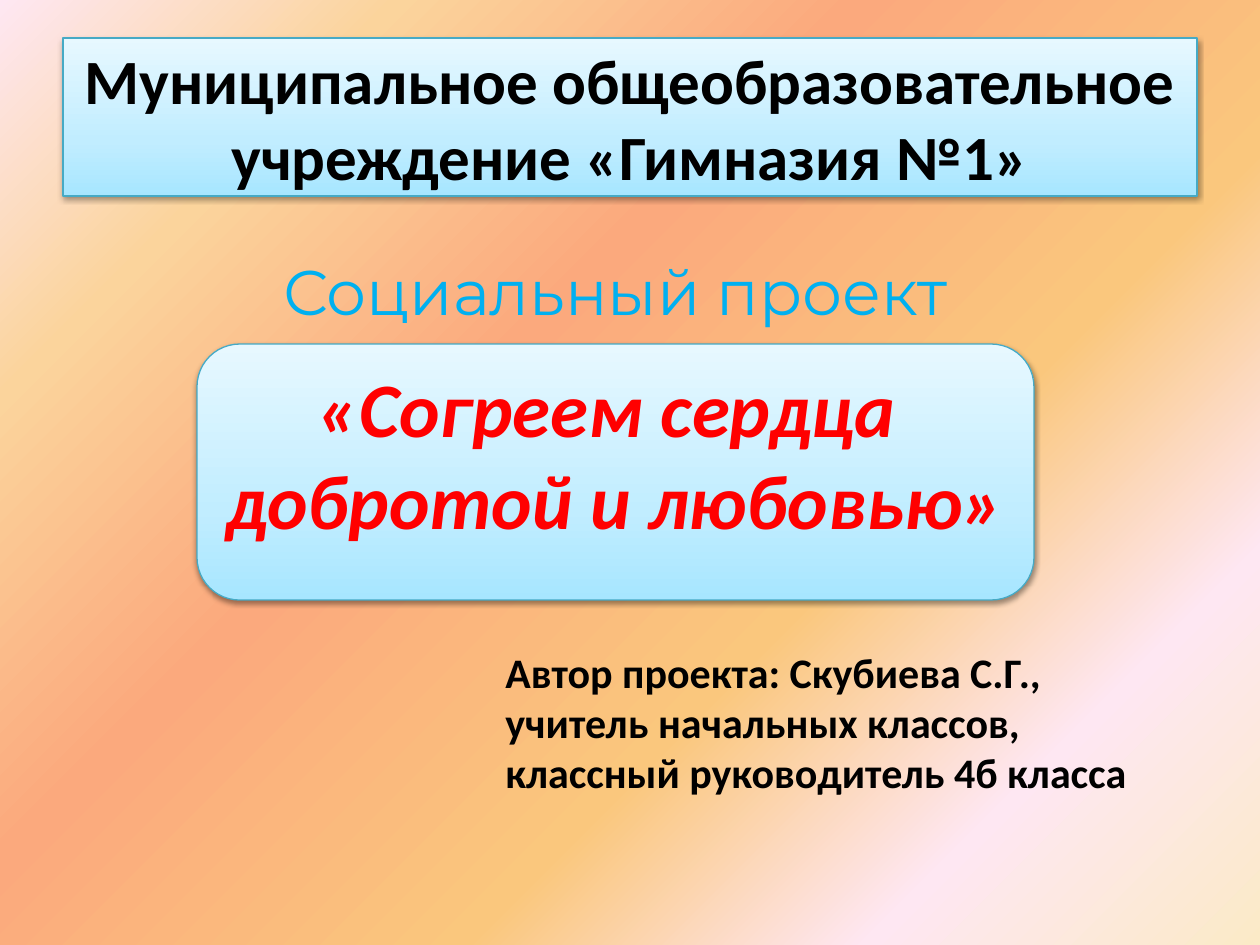
from dataclasses import dataclass

from lxml import etree
from pptx import Presentation, util as u
from pptx.dml.color import RGBColor
from pptx.enum import shapes, text
from pptx.oxml import ns

PX = 914400 / 126


@dataclass(frozen=True)
class Theme:
    black: str = "000000"
    red: str = "FF0000"
    sky: str = "00B0F0"
    border: str = "46AAC5"
    panel: tuple = ((0, "A7E6FF"), (35, "C1EDFF"), (100, "E7F8FF"))
    backdrop: tuple = (
        (0, "FBEAC7"), (18, "FEE7F2"), (36, "FAC77D"),
        (61, "FBA97D"), (82, "FBD49C"), (100, "FEE7F2"),
    )
    body_font: str = "Calibri"
    accent_font: str = "Montserrat"
    slogan_size: int = 44
    heading_size: int = 36
    author_size: int = 24


THEME = Theme()


@dataclass(frozen=True)
class Block:
    box: tuple[int, int, int, int]
    wording: str
    size: int
    color: str
    font: str = THEME.body_font
    bold: bool = True
    italic: bool = False
    align: text.PP_ALIGN = text.PP_ALIGN.CENTER
    wrap: bool = True
    panel: shapes.MSO_SHAPE | None = None
    bottom_inset: int = 6


BLOCKS = (
    Block((63, 38, 1134, 158),
          "Муниципальное общеобразовательное учреждение «Гимназия №1»",
          THEME.heading_size, THEME.black, panel=shapes.MSO_SHAPE.RECTANGLE),
    Block((178, 246, 891, 217), "Социальный проект ",
          THEME.heading_size, THEME.sky, font=THEME.accent_font,
          bold=False, wrap=False),
    Block((197, 344, 837, 256), "«Согреем сердца \nдобротой и любовью»",
          THEME.slogan_size, THEME.red, italic=True,
          panel=shapes.MSO_SHAPE.ROUNDED_RECTANGLE, bottom_inset=45),
    Block((493, 640, 679, 165),
          "Автор проекта: Скубиева С.Г.,\nучитель начальных классов,\n"
          "классный руководитель 4б класса",
          THEME.author_size, THEME.black, align=text.PP_ALIGN.LEFT),
)


def px(length: int) -> u.Emu:
    return u.Emu(round(length * PX))


def add_node(parent, tag: str, **attributes):
    values = {name: str(value) for name, value in attributes.items()}
    return etree.SubElement(parent, ns.qn(tag), values)


def apply_gradient(owner, fill, stops: tuple, angle: int) -> None:
    fill.gradient()
    fill.gradient_angle = angle
    stop_list = owner.find(".//" + ns.qn("a:gsLst"))
    for stop in list(stop_list):
        stop_list.remove(stop)
    for position, color in stops:
        stop = add_node(stop_list, "a:gs", pos=position * 1000)
        add_node(stop, "a:srgbClr", val=color)


def apply_shadow(panel) -> None:
    panel.shadow.inherit = False
    effects = panel.element.spPr.find(ns.qn("a:effectLst"))
    shadow = add_node(effects, "a:outerShdw", blurRad=40000, dist=20000,
                      dir=5400000, rotWithShape=0)
    color = add_node(shadow, "a:srgbClr", val=THEME.black)
    add_node(color, "a:alpha", val=38000)


def draw_block(slide, block: Block) -> None:
    box = [px(length) for length in block.box]
    if block.panel is None:
        holder = slide.shapes.add_textbox(*box)
    else:
        holder = slide.shapes.add_shape(block.panel, *box)
        apply_gradient(holder.element, holder.fill, THEME.panel, 90)
        holder.line.color.rgb = RGBColor.from_string(THEME.border)
        holder.line.width = u.Pt(0.75)
        apply_shadow(holder)
    frame = holder.text_frame
    frame.text = block.wording
    frame.word_wrap = block.wrap
    frame.margin_bottom = px(block.bottom_inset)
    frame.vertical_anchor = (
        text.MSO_ANCHOR.MIDDLE if block.panel else text.MSO_ANCHOR.TOP
    )
    for paragraph in frame.paragraphs:
        paragraph.alignment = block.align
        for run in paragraph.runs:
            run.font.name = block.font
            run.font.size = u.Pt(block.size)
            run.font.bold = block.bold
            run.font.italic = block.italic
            run.font.color.rgb = RGBColor.from_string(block.color)


def main() -> None:
    deck = Presentation()
    deck.slide_width, deck.slide_height = px(1260), px(945)
    slide = deck.slides.add_slide(deck.slide_layouts[6])
    backdrop = slide.background.fill
    apply_gradient(slide.element, backdrop, THEME.backdrop, 135)
    for block in BLOCKS:
        draw_block(slide, block)
    deck.save("out.pptx")


if __name__ == "__main__":
    main()
